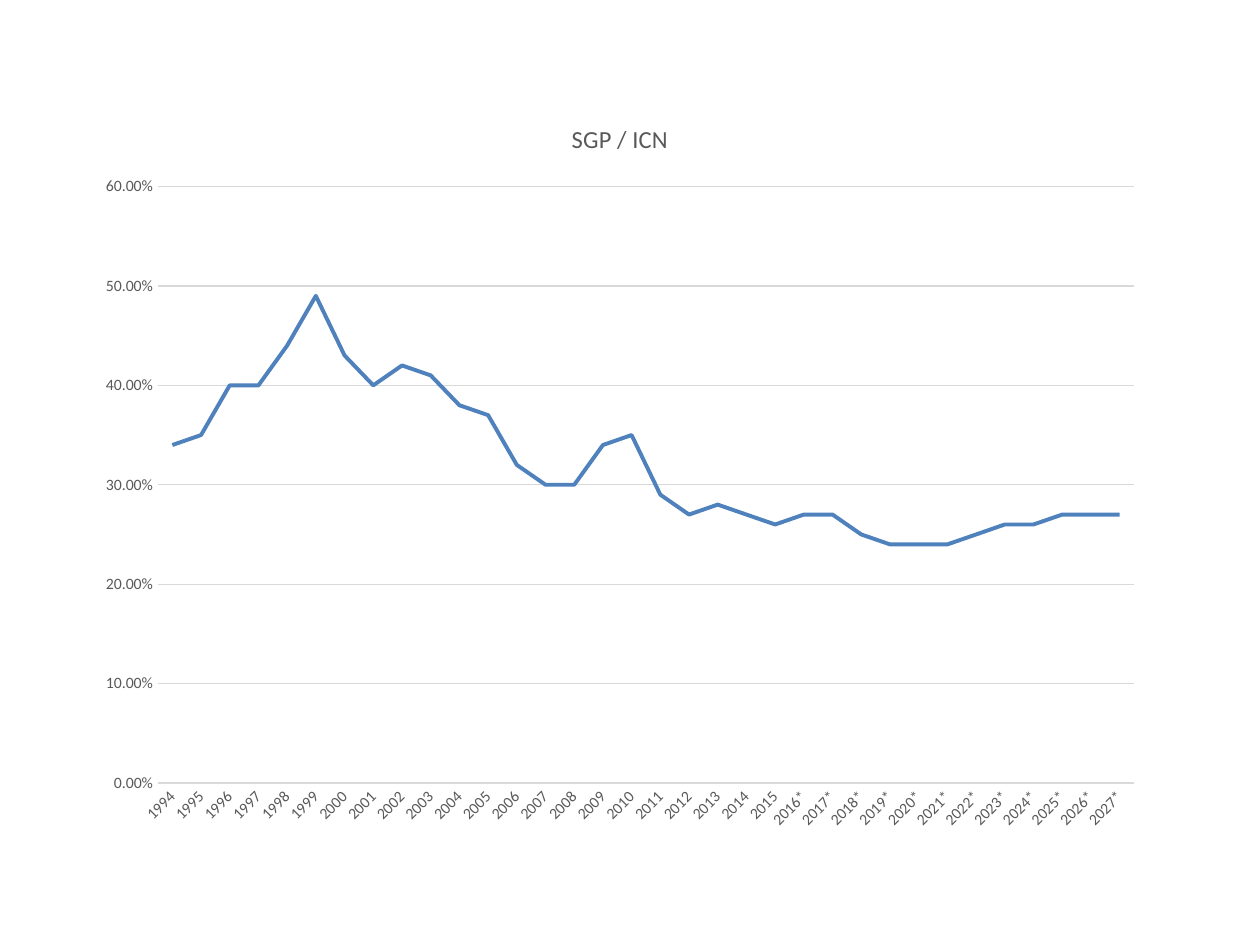
import pptx
import pptx.chart.data
import pptx.dml.color
import pptx.enum.chart
import pptx.util
from pptx.util import Inches


def color(text):
    return pptx.dml.color.RGBColor.from_string(text)


def style(font, size):
    font.name = "Calibri"
    font.size = pptx.util.Pt(size)
    font.bold = False
    font.color.rgb = color("595959")


deck = pptx.Presentation()
deck.slide_width = Inches(10)
deck.slide_height = Inches(7.5)
slide = deck.slides.add_slide(deck.slide_layouts[6])

# Years from 2016 on carry a star
years = [f"{year}*" if year >= 2016 else str(year) for year in range(1994, 2028)]
rates = [
    0.34, 0.35, 0.4, 0.4, 0.44, 0.49, 0.43, 0.4, 0.42, 0.41, 0.38, 0.37,
    0.32, 0.3, 0.3, 0.34, 0.35, 0.29, 0.27, 0.28, 0.27, 0.26, 0.27, 0.27,
    0.25, 0.24, 0.24, 0.24, 0.25, 0.26, 0.26, 0.27, 0.27, 0.27,
]
data = pptx.chart.data.CategoryChartData(number_format="0.00%")
data.categories = years
data.add_series("Series 1", rates)

chart = slide.shapes.add_chart(
    pptx.enum.chart.XL_CHART_TYPE.LINE,
    Inches(0.67), Inches(0.76), Inches(8.5), Inches(5.94), data,
).chart
chart.font.name = "Calibri"
chart.font.size = pptx.util.Pt(10)
chart.font.color.rgb = color("000000")
chart.has_legend = False
chart.has_title = True
title = chart.chart_title.text_frame
title.text = "SGP / ICN"
style(title.paragraphs[0].font, 14)
chart.chart_title.include_in_layout = False

plot = chart.plots[0]
plot.vary_by_categories = False
line = plot.series[0]
line.smooth = False
line.marker.style = pptx.enum.chart.XL_MARKER_STYLE.NONE
line.format.line.color.rgb = color("4F81BD")
line.format.line.width = pptx.util.Pt(2.25)

for axis in (chart.category_axis, chart.value_axis):
    style(axis.tick_labels.font, 9)
    axis.major_tick_mark = pptx.enum.chart.XL_TICK_MARK.NONE
    axis.minor_tick_mark = pptx.enum.chart.XL_TICK_MARK.NONE

base, scale = chart.category_axis, chart.value_axis
base.has_major_gridlines = False
scale.has_major_gridlines = True
for rule in (base.format.line, scale.major_gridlines.format.line):
    rule.color.rgb = color("D9D9D9")
    rule.width = pptx.util.Pt(0.75)
# Slant the year labels by 45 degrees, in 60000ths of a degree
base.tick_labels.font
base_text = base._element.find(pptx.oxml.ns.qn("c:txPr"))
base_text.find(pptx.oxml.ns.qn("a:bodyPr")).set("rot", str(-45 * 60000))

scale.format.line.fill.background()
scale.minimum_scale = 0
scale.maximum_scale = 0.6
scale.major_unit = 0.1
scale.tick_labels.number_format = "0.00%"
scale.tick_labels.number_format_is_linked = False

deck.save("out.pptx")
